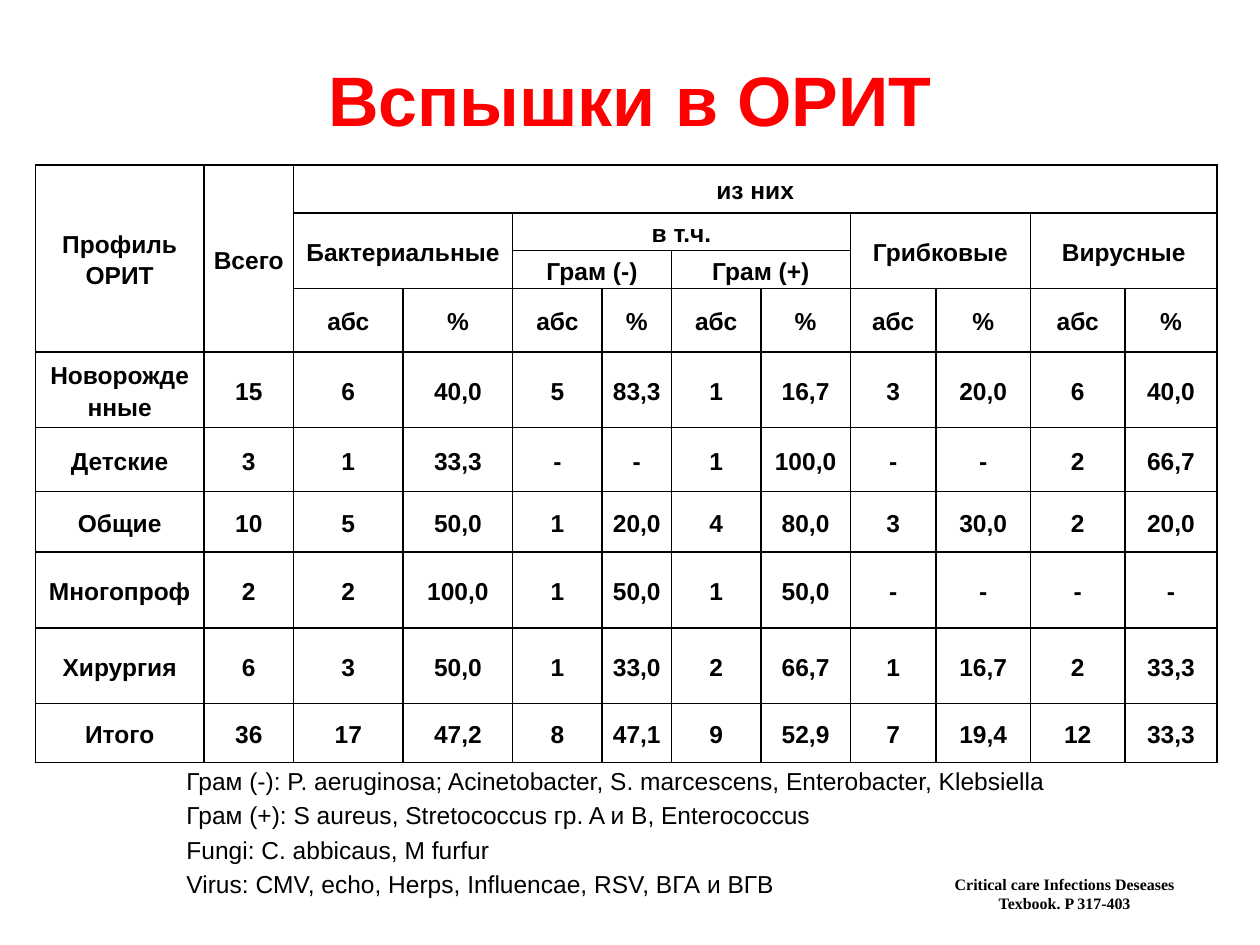
from lxml.etree import SubElement
from pptx import Presentation
from pptx.dml.color import RGBColor
from pptx.enum.text import MSO_ANCHOR as Anchor, MSO_AUTO_SIZE as AutoSize, PP_ALIGN as Align
from pptx.oxml.ns import qn
from pptx.util import Inches, Pt

COLS = [1.34, 0.71, 0.87, 0.87, 0.71, 0.55, 0.71, 0.71, 0.68, 0.75, 0.75, 0.73]
ROWS = [0.38, 0.3, 0.3, 0.5, 0.6, 0.51, 0.48, 0.6, 0.6, 0.47]
HEADERS = [
    (0, 0, 4, 1, "Профиль ОРИТ"),
    (0, 1, 4, 1, "Всего"),
    (0, 2, 1, 10, "из них"),
    (1, 2, 2, 2, "Бактериальные"),
    (1, 4, 1, 4, "в т.ч."),
    (1, 8, 2, 2, "Грибковые"),
    (1, 10, 2, 2, "Вирусные"),
    (2, 4, 1, 2, "Грам (-)"),
    (2, 6, 1, 2, "Грам (+)"),
] + [(3, c, 1, 1, "%" if c % 2 else "абс") for c in range(2, 12)]
DATA = [
    "Новорожденные 15 6 40,0 5 83,3 1 16,7 3 20,0 6 40,0",
    "Детские 3 1 33,3 - - 1 100,0 - - 2 66,7",
    "Общие 10 5 50,0 1 20,0 4 80,0 3 30,0 2 20,0",
    "Многопроф 2 2 100,0 1 50,0 1 50,0 - - - -",
    "Хирургия 6 3 50,0 1 33,0 2 66,7 1 16,7 2 33,3",
    "Итого 36 17 47,2 8 47,1 9 52,9 7 19,4 12 33,3",
]
PATHOGENS = [
    "Грам (-): P. aeruginosa; Acinetobacter, S. marcescens, Enterobacter, Klebsiella",
    "Грам (+): S aureus, Stretocoсcus гp. A и В, Enterococcus",
    "Fungi: C. abbicaus, M furfur",
    "Virus: CMV, echo, Herps, Influencae, RSV, ВГА и ВГВ",
]


def rgb(value):
    """Turn a hex string into a colour."""
    return RGBColor.from_string(value)


class Deck:
    """Holds the style and the current slide."""

    font, ink, accent, size = "Arial", "000000", "FF0000", 14

    def __init__(self):
        """Open a blank presentation with one title slide."""
        self.prs = Presentation()
        self.prs.slide_width, self.prs.slide_height = Inches(10), Inches(7.5)
        self.s = self.prs.slides.add_slide(self.prs.slide_layouts[0])

    def format(self, tf, align, size=None, bold=False, color=None, font=None, spacing=None):
        """Format every paragraph and run of a text frame."""
        for p in tf.paragraphs:
            p.alignment = align
            if spacing:
                p.line_spacing = spacing
            for r in p.runs:
                r.font.name = font or self.font
                r.font.size = Pt(size or self.size)
                r.font.bold = bold
                r.font.color.rgb = rgb(color or self.ink)

    def fill_text(self, sp, box, text, anchor, align, **style):
        """Place a text shape, then write and format its text."""
        sp.left, sp.top, sp.width, sp.height = map(Inches, box)
        tf = sp.text_frame
        tf.text = text
        tf.word_wrap, tf.auto_size, tf.vertical_anchor = True, AutoSize.NONE, anchor
        self.format(tf, align, **style)

    def title(self, box, text):
        """Fill the title placeholder."""
        self.fill_text(self.s.shapes.title, box, text, Anchor.MIDDLE, Align.CENTER,
                       size=40, bold=True, color=self.accent)

    def body(self, box, lines):
        """Fill the subtitle placeholder with one paragraph per line."""
        self.fill_text(self.s.placeholders[1], box, "\n".join(lines), Anchor.TOP, Align.JUSTIFY)

    def source(self, box, text):
        """Add the small reference text."""
        sp = self.s.shapes.add_textbox(*map(Inches, box))
        self.fill_text(sp, box, text, Anchor.MIDDLE, Align.CENTER,
                       size=9.1, bold=True, font="Times New Roman")

    def border(self, cell):
        """Draw a thin line on all four sides of a cell."""
        tcPr = cell._tc.get_or_add_tcPr()
        for i, side in enumerate(("a:lnL", "a:lnR", "a:lnT", "a:lnB")):
            ln = SubElement(tcPr, qn(side), w=str(Pt(1)))
            SubElement(SubElement(ln, qn("a:solidFill")), qn("a:srgbClr"), val=self.ink)
            tcPr.insert(i, ln)

    def table(self, left, top, headers, data):
        """Add the grid with its merged headers and data rows."""
        box = left, top, sum(COLS), sum(ROWS)
        tbl = self.s.shapes.add_table(len(ROWS), len(COLS), *map(Inches, box)).table
        tbl.first_row = tbl.horz_banding = False
        for col, width in zip(tbl.columns, COLS):
            col.width = Inches(width)
        for row, height in zip(tbl.rows, ROWS):
            row.height = Inches(height)
        for r, c, rows, cols, text in headers:
            cell = tbl.cell(r, c)
            cell.text = text
            if rows * cols > 1:
                cell.merge(tbl.cell(r + rows - 1, c + cols - 1))
        for r, line in enumerate(data, len(ROWS) - len(data)):
            for c, text in enumerate(line.split()):
                tbl.cell(r, c).text = text
        for cell in tbl.iter_cells():
            cell.fill.background()
            cell.margin_left = cell.margin_right = Inches(0.07)
            cell.margin_top = cell.margin_bottom = 0
            cell.vertical_anchor = Anchor.MIDDLE
            self.format(cell.text_frame, Align.CENTER, bold=True, spacing=1.15)
            self.border(cell)


def main():
    """Build and save the slide."""
    deck = Deck()
    deck.title((0.75, 0.21, 8.5, 1.14), "Вспышки в ОРИТ")
    deck.body((1.38, 6.03, 7.4, 1.1), PATHOGENS)
    deck.table(0.28, 1.31, HEADERS, DATA)
    deck.source((7.36, 6.9, 2.18, 0.38), "Critical care Infections Deseases Texbook. P 317-403")
    deck.prs.save("out.pptx")


if __name__ == "__main__":
    main()
